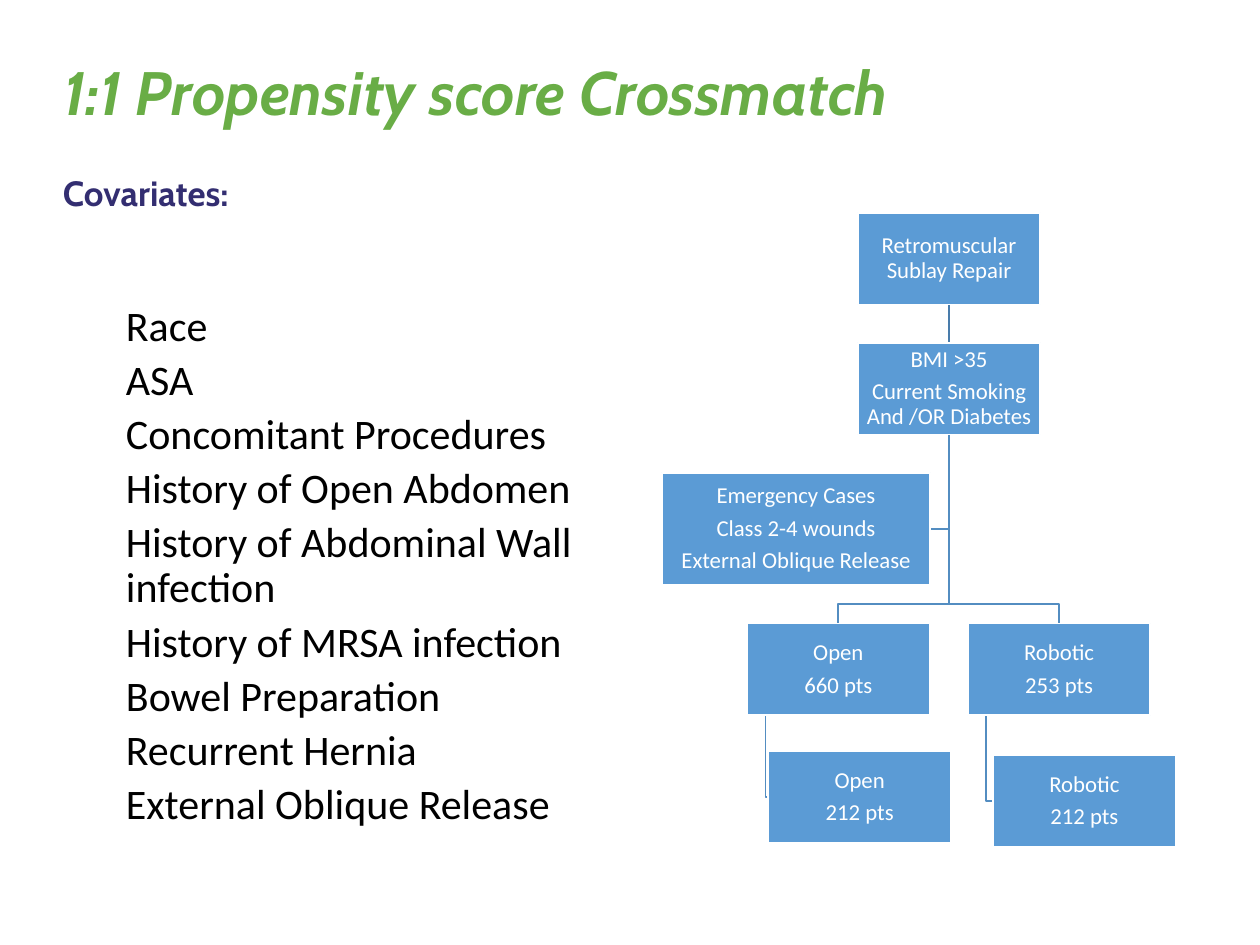
from lxml.etree import SubElement
from pptx import Presentation
from pptx.dml.color import RGBColor
from pptx.enum.shapes import MSO_CONNECTOR, MSO_SHAPE
from pptx.enum.text import MSO_ANCHOR, MSO_AUTO_SIZE, PP_ALIGN
from pptx.oxml.ns import qn
from pptx.util import Cm, Pt

GREEN, PURPLE, BLACK, WHITE = "69AD46", "332E71", "000000", "FFFFFF"
BOX_BLUE, LINE_BLUE, STEM_BLUE = "5B9BD5", "538DC1", "497CAB"

MARGIN = 1.27
BOX_W, BOX_H = 3.68, 1.85
TRUNK_X = 19.13  # centre line of the flow chart
REPAIR_Y, CRITERIA_Y, GROUP_Y = 4.29, 6.91, 12.57
BRANCH_Y = 12.17
OPEN_X, ROBOTIC_X = 15.06, 19.51

COVARIATES = [
    "Race", "ASA", "Concomitant Procedures", "History of Open Abdomen",
    "History of Abdominal Wall infection", "History of MRSA infection",
    "Bowel Preparation", "Recurrent Hernia", "External Oblique Release",
]


def color(hex_code):
    return RGBColor.from_string(hex_code)


def set_font(paragraph, name, size, hex_code, bold=False, italic=False):
    font = paragraph.font
    font.name, font.size = name, Pt(size)
    font.bold, font.italic = bold, italic
    font.color.rgb = color(hex_code)


def prepare_frame(frame, inset=0, anchor=MSO_ANCHOR.TOP):
    frame.word_wrap = True
    frame.auto_size = MSO_AUTO_SIZE.NONE
    frame.vertical_anchor = anchor
    frame.margin_left = frame.margin_right = Cm(inset)
    frame.margin_top = frame.margin_bottom = Cm(inset)


def fill_lines(frame, lines, align):
    """Write one paragraph per line and return the paragraphs."""
    frame.text = "\n".join(lines)
    for paragraph in frame.paragraphs:
        paragraph.alignment = align
        paragraph.line_spacing = 0.9
    return frame.paragraphs


def add_title(slide, text):
    title = slide.shapes.title
    title.left, title.top = Cm(MARGIN), Cm(1.27)
    title.width, title.height = Cm(22.86), Cm(1.27)
    prepare_frame(title.text_frame)
    heading, = fill_lines(title.text_frame, [text], PP_ALIGN.LEFT)
    set_font(heading, "Cabin", 35, GREEN, bold=True, italic=True)


def add_text(slide, top, height, lines):
    box = slide.shapes.add_textbox(Cm(MARGIN), Cm(top), Cm(10.8), Cm(height))
    prepare_frame(box.text_frame)
    return box.text_frame, fill_lines(box.text_frame, lines, PP_ALIGN.LEFT)


def add_covariates(slide):
    _, (subtitle,) = add_text(slide, 3.56, 0.76, ["Covariates:"])
    set_font(subtitle, "Cabin", 20, PURPLE, bold=True)

    frame, items = add_text(slide, 5.08, 12.7, COVARIATES)
    frame.margin_top, frame.margin_left = Cm(1.07), Cm(1.27)
    for index, item in enumerate(items):
        item.space_before = Pt(5 if index else 0)
        set_font(item, "Calibri", 24, BLACK)


def add_box(slide, left, top, lines, width=BOX_W, height=BOX_H):
    box = slide.shapes.add_shape(
        MSO_SHAPE.RECTANGLE, Cm(left), Cm(top), Cm(width), Cm(height))
    box.shadow.inherit = False
    box.fill.solid()
    box.fill.fore_color.rgb = color(BOX_BLUE)
    box.line.color.rgb = color(WHITE)
    box.line.width = Pt(1)
    prepare_frame(box.text_frame, 0.03, MSO_ANCHOR.MIDDLE)
    paragraphs = fill_lines(box.text_frame, lines, PP_ALIGN.CENTER)
    for paragraph in paragraphs:
        paragraph.space_after = Pt(4.5)
        set_font(paragraph, "Calibri", 13, WHITE)


def add_stem(slide, x, top, bottom):
    stem = slide.shapes.add_connector(
        MSO_CONNECTOR.STRAIGHT, Cm(x), Cm(top), Cm(x), Cm(bottom))
    stem.line.color.rgb = color(STEM_BLUE)
    stem.line.width = Pt(1)
    SubElement(stem._element.spPr, qn("a:effectLst"))


def add_elbow(slide, start, *corners):
    builder = slide.shapes.build_freeform(Cm(start[0]), Cm(start[1]))
    builder.add_line_segments(
        [(Cm(x), Cm(y)) for x, y in corners], close=False)
    elbow = builder.convert_to_shape()
    elbow.shadow.inherit = False
    elbow.fill.background()
    elbow.line.color.rgb = color(LINE_BLUE)
    elbow.line.width = Pt(1)


def add_flow_chart(slide):
    trunk_start = (TRUNK_X, CRITERIA_Y + BOX_H)
    matched = [("Open", OPEN_X, 15.49, 15.14, "660 pts"),
               ("Robotic", ROBOTIC_X, 20.02, 15.22, "253 pts")]

    # Lines go first so that the boxes cover their ends
    add_stem(slide, TRUNK_X, REPAIR_Y + BOX_H, CRITERIA_Y)
    add_elbow(slide, trunk_start, (TRUNK_X, 10.67), (18.75, 10.67))
    for _, group_x, match_x, match_y, _ in matched:
        centre, hook_x = group_x + BOX_W / 2, group_x + 0.37
        hook_y = match_y + BOX_H / 2
        add_elbow(slide, trunk_start, (TRUNK_X, BRANCH_Y),
                  (centre, BRANCH_Y), (centre, GROUP_Y))
        add_elbow(slide, (hook_x, GROUP_Y + BOX_H),
                  (hook_x, hook_y), (match_x, hook_y))

    # Selection and exclusion boxes
    trunk_left = TRUNK_X - BOX_W / 2
    add_box(slide, trunk_left, REPAIR_Y, ["Retromuscular Sublay Repair"])
    add_box(slide, trunk_left, CRITERIA_Y,
            ["BMI >35", "Current Smoking And /OR Diabetes"])
    add_box(slide, 13.34, 9.53,
            ["Emergency Cases", "Class 2-4 wounds", "External Oblique Release"],
            width=5.41, height=2.26)

    # Groups before and after matching
    for group, group_x, match_x, match_y, patients in matched:
        add_box(slide, group_x, GROUP_Y, [group, patients])
        add_box(slide, match_x, match_y, [group, "212 pts"])


def main():
    presentation = Presentation()
    presentation.slide_width, presentation.slide_height = Cm(25.4), Cm(19.05)
    slide = presentation.slides.add_slide(presentation.slide_layouts[5])
    add_title(slide, "1:1 Propensity score Crossmatch")
    add_covariates(slide)
    add_flow_chart(slide)
    presentation.save("out.pptx")


if __name__ == "__main__":
    main()
